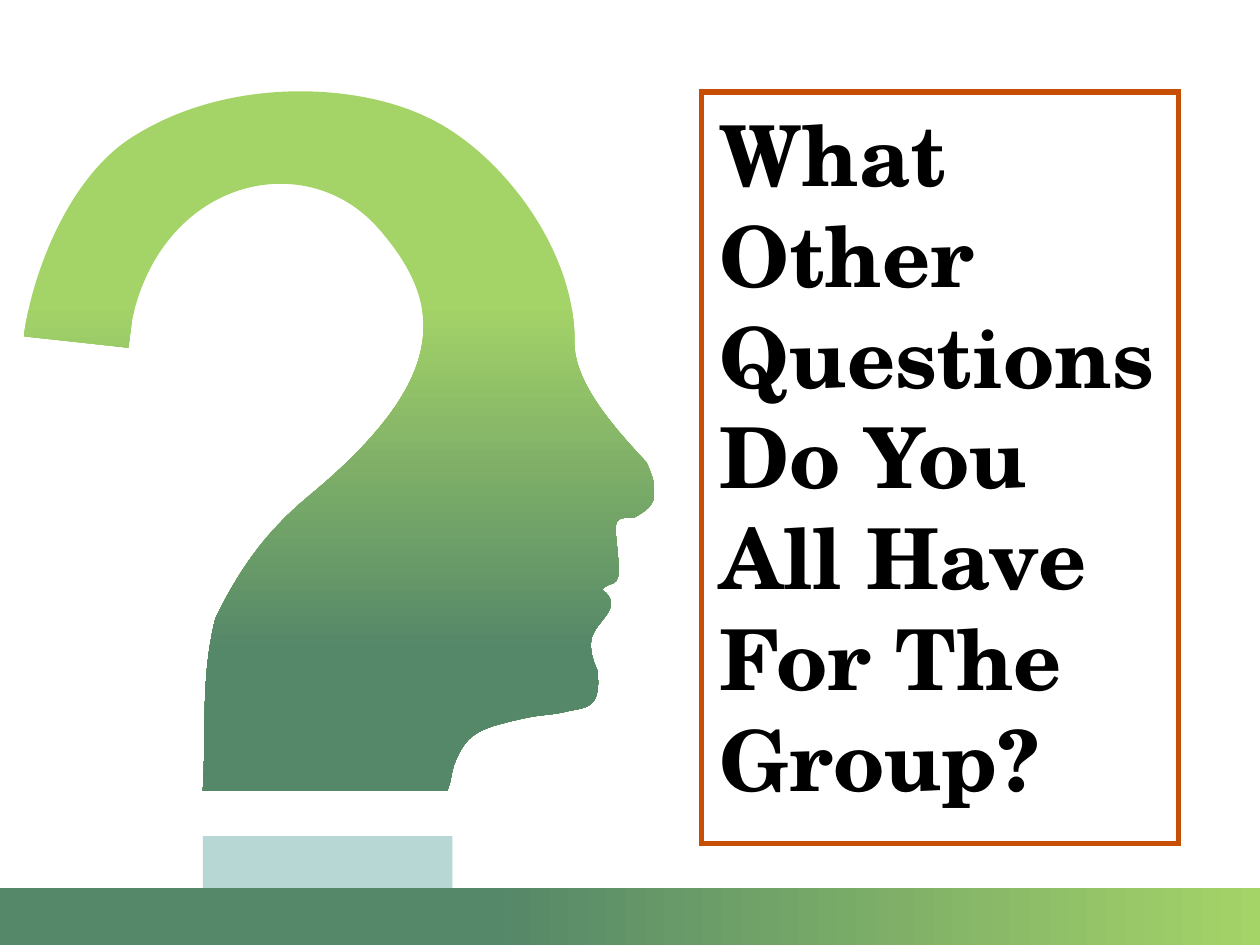
from lxml import etree
from pptx import Presentation
from pptx.dml.color import RGBColor
from pptx.enum.shapes import MSO_SHAPE as Shape
from pptx.enum.text import MSO_ANCHOR as Anchor, MSO_AUTO_SIZE as AutoSize, PP_ALIGN as Align
from pptx.oxml.ns import qn
from pptx.util import Pt

THEME = {
    "lime": RGBColor.from_string("A4D467"),
    "green": RGBColor.from_string("558769"),
    "pale": RGBColor.from_string("B7D7D5"),
    "frame": RGBColor.from_string("C74F05"),
    "text": RGBColor.from_string("000000"),
    "font": "TeX Gyre Schola",
    "title_size": Pt(48),
}
UNITS = 100  # outline units per point


def fill_gradient(shape, lime_at, green_at, angle):
    """Blend from lime to green; the angle runs counter-clockwise."""
    shape.fill.gradient()
    shape.fill.gradient_angle = angle
    stops = zip(shape.fill.gradient_stops, ("lime", "green"), (lime_at, green_at))
    for stop, color, position in stops:
        stop.color.rgb = THEME[color]
        stop.position = position


presentation = Presentation()
presentation.slide_width, presentation.slide_height = Pt(720), Pt(540)
slide = presentation.slides.add_slide(presentation.slide_layouts[5])

# Question mark with a face profile: 2 numbers make a line, 6 make a curve
profile_left, profile_top, profile_width, profile_height = 13.7, 52.5, 360.5, 399.7
profile_start = (77.8, 77)
profile_segments = [
    # crown and forehead
    (130.3, 44.6, 202.3, 46.8, 244.1, 67),
    (285.8, 86.4, 329, 142.6, 328.3, 195.1),
    # nose, lips and chin
    (327.6, 219.6, 354.2, 247.7, 369.4, 264.2),
    (379.4, 285.8, 372.2, 290.2, 362.2, 295.9),
    (347.8, 295.2, 352.1, 298.8, 353.5, 323.3),
    (354.2, 337, 348.5, 331.2, 344.2, 337),
    (355.7, 345.6, 344.2, 352.8, 339.8, 360.7),
    (335.5, 367.2, 338.4, 376.6, 341.3, 383),
    (344.2, 406.8, 333.4, 403.9, 322.6, 406.8),
    # jaw and neck
    (309.6, 409.7, 311, 406.8, 282.2, 414.7),
    (270, 419, 265, 422.6, 259.2, 437.8),
    (256.3, 450, 259.2, 440.6, 255.6, 452.2),
    (115.9, 452.2),
    # inner edge of the hook
    (118.1, 419, 114.5, 388.1, 123.1, 353.5),
    (136.8, 325.4, 151.9, 303.8, 177.1, 283),
    (257, 216.7, 254.2, 174.2, 216.7, 131),
    (175.7, 83.5, 93.6, 101.5, 75.6, 182.2),
    (73.4, 198.7),
    (13.7, 192.2),
    (18, 157, 39.6, 99.4, 77.8, 77),
]
builder = slide.shapes.build_freeform(*profile_start, scale=Pt(1))
builder.add_line_segments([segment[-2:] for segment in profile_segments], close=True)
profile = builder.convert_to_shape()
profile.left, profile.top = Pt(profile_left), Pt(profile_top)
profile.width, profile.height = Pt(profile_width), Pt(profile_height)

# Bend the outline: write each segment as a line or a cubic curve
outline = next(profile.element.iter(qn("a:path")))
outline.set("w", str(round(profile_width * UNITS)))
outline.set("h", str(round(profile_height * UNITS)))
for step in list(outline):
    outline.remove(step)
tags = {2: "a:lnTo", 6: "a:cubicBezTo"}
steps = [("a:moveTo", profile_start)] + [(tags[len(s)], s) for s in profile_segments]
for tag, numbers in steps:
    step = etree.SubElement(outline, qn(tag))
    for x, y in zip(numbers[::2], numbers[1::2]):
        point = etree.SubElement(step, qn("a:pt"))
        point.set("x", str(round((x - profile_left) * UNITS)))
        point.set("y", str(round((y - profile_top) * UNITS)))
etree.SubElement(outline, qn("a:close"))
fill_gradient(profile, 0.3, 0.8, 270)

# Dot of the question mark
dot = slide.shapes.add_shape(Shape.RECTANGLE, Pt(115.9), Pt(477.8), Pt(142.6), Pt(29.5))
dot.fill.solid()
dot.fill.fore_color.rgb = THEME["pale"]

# Footer band
band = slide.shapes.add_shape(Shape.RECTANGLE, Pt(0), Pt(507.5), Pt(720), Pt(32.5))
fill_gradient(band, 0, 0.61, 180)

# Frame around the title
frame = slide.shapes.add_shape(Shape.RECTANGLE, Pt(401), Pt(52.5), Pt(272.5), Pt(429.7))
frame.fill.background()

for shape in (profile, dot, band, frame):
    shape.shadow.inherit = False
    shape.line.fill.background()
frame.line.color.rgb = THEME["frame"]
frame.line.width = Pt(3)
frame_line = next(frame.element.iter(qn("a:ln")))
etree.SubElement(frame_line, qn("a:miter")).set("lim", "800000")

# Title
title = slide.shapes.title
title.left, title.top, title.width, title.height = Pt(404), Pt(55), Pt(268.5), Pt(427)
text_frame = title.text_frame
text_frame.word_wrap = True
text_frame.auto_size = AutoSize.NONE
text_frame.vertical_anchor = Anchor.TOP
paragraph = text_frame.paragraphs[0]
paragraph.alignment = Align.LEFT
run = paragraph.add_run()
run.text = "What Other Questions Do You All Have For The Group?"
run.font.name = THEME["font"]
run.font.size = THEME["title_size"]
run.font.bold = True
run.font.color.rgb = THEME["text"]

presentation.save("out.pptx")
